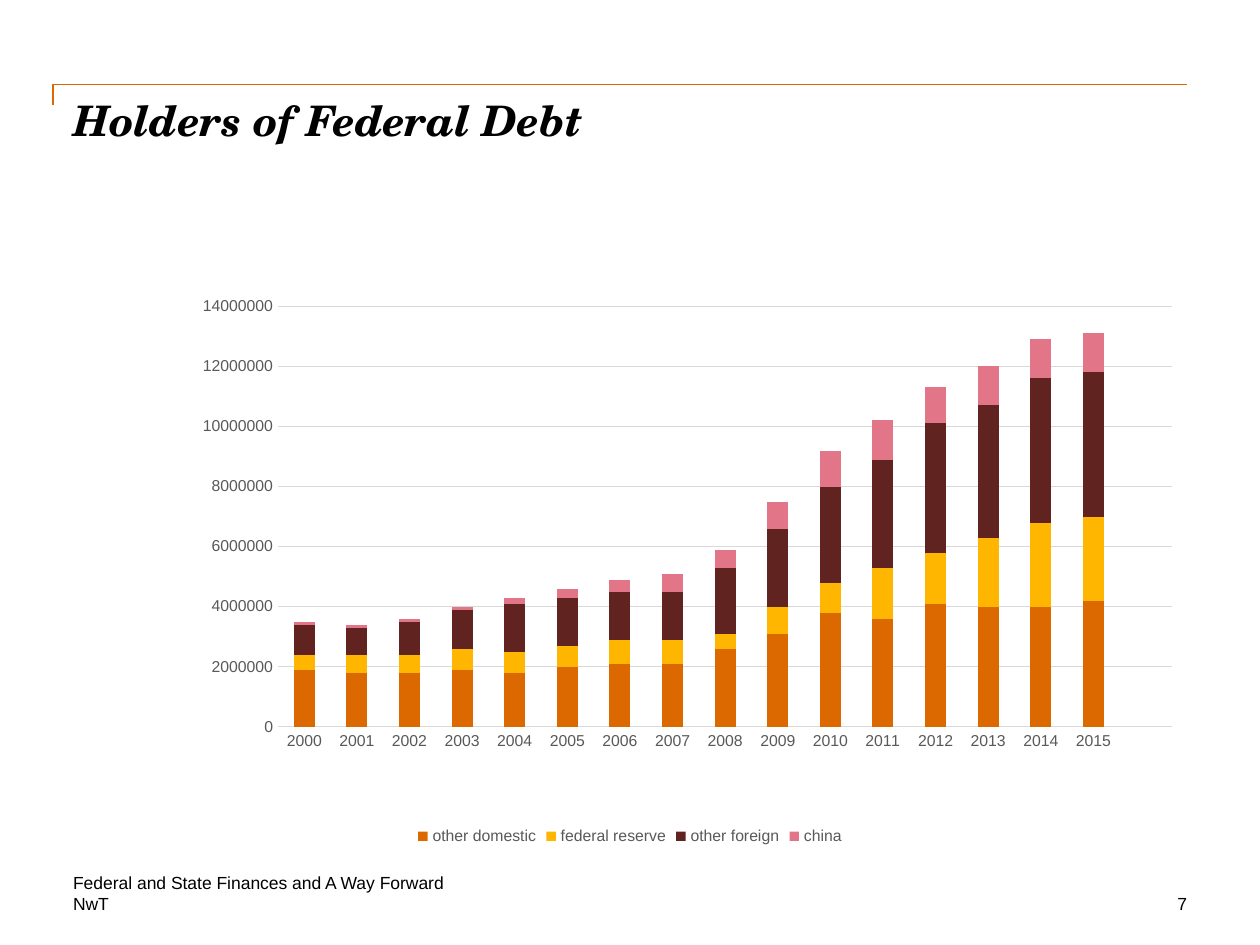
from lxml import etree
from pptx import Presentation
from pptx.chart.data import CategoryChartData
from pptx.dml.color import RGBColor
from pptx.enum.chart import XL_CHART_TYPE, XL_LEGEND_POSITION, XL_TICK_MARK
from pptx.enum.text import MSO_ANCHOR, PP_ALIGN
from pptx.oxml.ns import qn
from pptx.util import Inches, Pt

STACKED = XL_CHART_TYPE.COLUMN_STACKED
LEGEND_BOTTOM = XL_LEGEND_POSITION.BOTTOM
NO_TICK = XL_TICK_MARK.NONE
TOP, BOTTOM = MSO_ANCHOR.TOP, MSO_ANCHOR.BOTTOM
LEFT, RIGHT = PP_ALIGN.LEFT, PP_ALIGN.RIGHT

COLORS = {"ink": "000000", "label": "595959", "grid": "D9D9D9", "accent": "DC6900"}
BODY_FONT, TITLE_FONT = "Arial", "TeX Gyre Schola"
WIDTH, HEIGHT = 10, 7.5
MARGIN = 0.58
CONTENT = WIDTH - 2 * MARGIN
FOOTER_ROW = 0.17
FOOTER_TOP = 6.92
RULE_LEFT, RULE_TOP, RULE_DROP = 0.42, 0.67, 0.16

TEXTS = [
    ("Holders of Federal Debt", (MARGIN, 0.75, CONTENT, 1), TITLE_FONT, 24, True, LEFT, TOP),
    ("Federal and State Finances and A Way Forward",
     (MARGIN, FOOTER_TOP, 5.75, FOOTER_ROW), BODY_FONT, 10, False, LEFT, BOTTOM),
    ("NwT", (MARGIN, FOOTER_TOP + FOOTER_ROW, 2.83, FOOTER_ROW),
     BODY_FONT, 10, False, LEFT, TOP),
    ("7", (WIDTH - MARGIN - 1.67, FOOTER_TOP + FOOTER_ROW, 1.67, FOOTER_ROW),
     BODY_FONT, 10, False, RIGHT, TOP),
]

YEARS = [str(year) for year in range(2000, 2016)] + [""]
UNIT = 100000
HOLDERS = [
    ("other domestic", "DC6900",
     [19, 18, 18, 19, 18, 20, 21, 21, 26, 31, 38, 36, 41, 40, 40, 42]),
    ("federal reserve", "FFB600",
     [5, 6, 6, 7, 7, 7, 8, 8, 5, 9, 10, 17, 17, 23, 28, 28]),
    ("other foreign", "602320",
     [10, 9, 11, 13, 16, 16, 16, 16, 22, 26, 32, 36, 43, 44, 48, 48]),
    ("china", "E27588",
     [1, 1, 1, 1, 2, 3, 4, 6, 6, 9, 12, 13, 12, 13, 13, 13]),
]
PLOT = {"x": 0.184, "y": 0.106, "w": 0.803, "h": 0.691}


def rgb(value):
    return RGBColor.from_string(value)


def style_font(font, size, color, name=BODY_FONT):
    font.size, font.name = Pt(size), name
    font.color.rgb = rgb(color)


def add_text(page, text, place, name, size, strong, align, anchor):
    box = page.shapes.add_textbox(*map(Inches, place))
    frame = box.text_frame
    frame.word_wrap = True
    frame.margin_left = frame.margin_right = frame.margin_top = frame.margin_bottom = 0
    frame.vertical_anchor = anchor
    frame.text = text
    para = frame.paragraphs[0]
    para.alignment = align
    span = para.runs[0]
    style_font(span.font, size, COLORS["ink"], name)
    span.font.bold = span.font.italic = strong


def add_rule(page):
    builder = page.shapes.build_freeform(
        Inches(RULE_LEFT), Inches(RULE_TOP + RULE_DROP))
    corners = [(RULE_LEFT, RULE_TOP), (WIDTH - MARGIN, RULE_TOP)]
    builder.add_line_segments(
        [(Inches(x), Inches(y)) for x, y in corners], close=False)
    rule = builder.convert_to_shape()
    rule.shadow.inherit = False
    rule.fill.background()
    rule.line.color.rgb = rgb(COLORS["accent"])
    rule.line.width = Pt(1)


def place_plot(chart):
    area = chart.plots[0]._element.getparent()
    for old in area.findall(qn("c:layout")):
        area.remove(old)
    layout = etree.Element(qn("c:layout"))
    area.insert(0, layout)
    manual = etree.SubElement(layout, qn("c:manualLayout"))
    settings = {"layoutTarget": "inner", "xMode": "edge", "yMode": "edge", **PLOT}
    for tag, value in settings.items():
        etree.SubElement(manual, qn(f"c:{tag}")).set("val", str(value))


def style_line(line):
    line.color.rgb = rgb(COLORS["grid"])
    line.width = Pt(0.75)


def add_debt_chart(page):
    data = CategoryChartData(number_format="General")
    data.categories = YEARS
    for name, _, values in HOLDERS:
        data.add_series(name, [value * UNIT for value in values] + [None])
    place = map(Inches, (MARGIN, 1.92, CONTENT, 4.83))
    chart = page.shapes.add_chart(STACKED, *place, data).chart
    style_font(chart.font, 10, COLORS["ink"])
    chart.has_title = False
    chart.has_legend = True
    chart.legend.position = LEGEND_BOTTOM
    chart.legend.include_in_layout = False
    style_font(chart.legend.font, 9, COLORS["label"])

    plot = chart.plots[0]
    plot.gap_width, plot.overlap = 150, 100
    plot.vary_by_categories = False
    for series, (_, color, _) in zip(plot.series, HOLDERS):
        series.format.fill.solid()
        series.format.fill.fore_color.rgb = rgb(color)

    for axis in (chart.category_axis, chart.value_axis):
        axis.major_tick_mark = axis.minor_tick_mark = NO_TICK
        style_font(axis.tick_labels.font, 9, COLORS["label"])
    style_line(chart.category_axis.format.line)
    amounts = chart.value_axis
    amounts.minimum_scale, amounts.maximum_scale = 0, 140 * UNIT
    amounts.major_unit = 20 * UNIT
    amounts.format.line.fill.background()
    style_line(amounts.major_gridlines.format.line)
    place_plot(chart)


def main():
    deck = Presentation()
    deck.slide_width, deck.slide_height = Inches(WIDTH), Inches(HEIGHT)
    page = deck.slides.add_slide(deck.slide_layouts[6])
    add_rule(page)
    for text in TEXTS:
        add_text(page, *text)
    add_debt_chart(page)
    deck.save("out.pptx")


if __name__ == "__main__":
    main()
